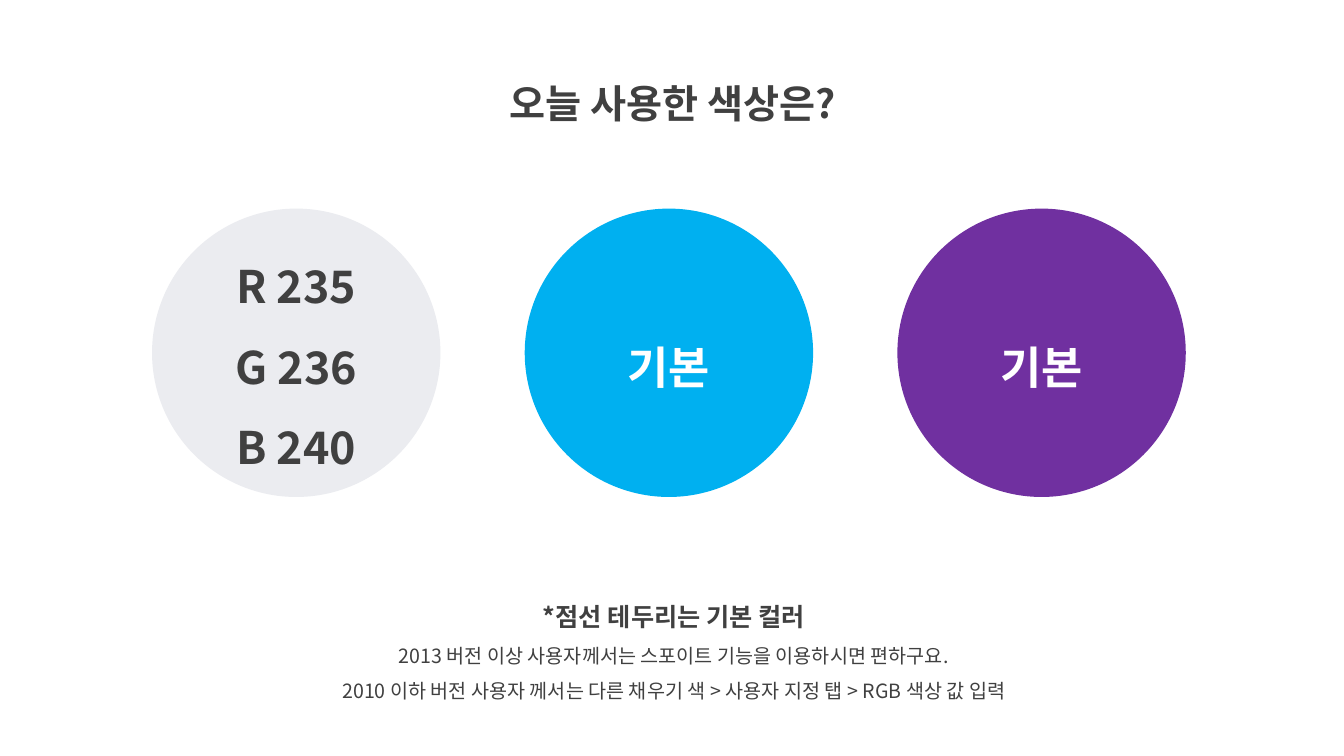
from dataclasses import dataclass

import pptx
import pptx.dml.color
import pptx.enum.shapes
import pptx.enum.text
import pptx.oxml
import pptx.oxml.ns
import pptx.util
from pptx.util import Pt


@dataclass(frozen=True)
class Theme:
    font: str = "Noto Sans CJK KR"
    dark: str = "404040"
    white: str = "FFFFFF"
    gray: str = "EBECF0"
    blue: str = "00B0F0"
    purple: str = "7030A0"
    title_size: float = 28
    swatch_size: float = 32
    heading_size: float = 18
    body_size: float = 14
    line_spacing: float = 1.5


@dataclass(frozen=True)
class Line:
    text: str
    size: float
    color: str
    bold: bool = True


@dataclass(frozen=True)
class TextBlock:
    left: float
    top: float
    width: float
    height: float
    lines: list[Line]


@dataclass(frozen=True)
class Swatch:
    fill: str
    color: str
    labels: list[str]


THEME = Theme()
SWATCH_LEFT, SWATCH_TOP = 108.6, 149
SWATCH_DIAMETER, SWATCH_PITCH = 206, 266.2

TEXT_BLOCKS = [
    TextBlock(314, 36, 333.4, 52, [
        Line("오늘 사용한 색상은?", THEME.title_size, THEME.dark),
    ]),
    TextBlock(193.6, 415.5, 575.4, 91, [
        Line("*점선 테두리는 기본 컬러", THEME.heading_size, THEME.dark),
        Line("2013 버전 이상 사용자께서는 스포이트 기능을 이용하시면 편하구요.",
             THEME.body_size, THEME.dark, False),
        Line("2010 이하 버전 사용자 께서는 다른 채우기 색 > 사용자 지정 탭 > RGB 색상 값 입력",
             THEME.body_size, THEME.dark, False),
    ]),
]

SWATCHES = [
    Swatch(THEME.gray, THEME.dark, ["R 235", "G 236", "B 240"]),
    Swatch(THEME.blue, THEME.white, ["기본"]),
    Swatch(THEME.purple, THEME.white, ["기본"]),
]


def rgb(value: str) -> pptx.dml.color.RGBColor:
    return pptx.dml.color.RGBColor.from_string(value)


def write_lines(frame: pptx.text.text.TextFrame, lines: list[Line]) -> None:
    frame.word_wrap = True
    frame.text = "\n".join(line.text for line in lines)
    for paragraph, line in zip(frame.paragraphs, lines):
        paragraph.alignment = pptx.enum.text.PP_ALIGN.CENTER
        paragraph.line_spacing = THEME.line_spacing
        for run in paragraph.runs:
            run.font.name = THEME.font
            run.font.size = Pt(line.size)
            run.font.bold = line.bold
            run.font.color.rgb = rgb(line.color)
            set_hangul_font(run)


def set_hangul_font(run: pptx.text.text._Run) -> None:
    """Give East Asian characters the theme font, which font.name leaves out."""
    latin = run.font._element.find(pptx.oxml.ns.qn("a:latin"))
    hangul = pptx.oxml.parse_xml(
        f'<a:ea {pptx.oxml.ns.nsdecls("a")} typeface="{THEME.font}"/>')
    latin.addnext(hangul)


def add_text_block(slide: pptx.slide.Slide, block: TextBlock) -> None:
    box = slide.shapes.add_textbox(
        Pt(block.left), Pt(block.top), Pt(block.width), Pt(block.height))
    write_lines(box.text_frame, block.lines)
    box.text_frame.auto_size = pptx.enum.text.MSO_AUTO_SIZE.SHAPE_TO_FIT_TEXT


def add_swatch(slide: pptx.slide.Slide, swatch: Swatch, left: float) -> None:
    circle = slide.shapes.add_shape(
        pptx.enum.shapes.MSO_SHAPE.OVAL,
        Pt(left), Pt(SWATCH_TOP), Pt(SWATCH_DIAMETER), Pt(SWATCH_DIAMETER))
    circle.shadow.inherit = False
    circle.fill.solid()
    circle.fill.fore_color.rgb = rgb(swatch.fill)
    circle.line.fill.background()
    circle.text_frame.vertical_anchor = pptx.enum.text.MSO_ANCHOR.MIDDLE
    write_lines(circle.text_frame, [
        Line(label, THEME.swatch_size, swatch.color) for label in swatch.labels])


def main() -> None:
    deck = pptx.Presentation()
    deck.slide_width, deck.slide_height = Pt(960), Pt(540)
    slide = deck.slides.add_slide(deck.slide_layouts[6])
    for block in TEXT_BLOCKS:
        add_text_block(slide, block)
    for index, swatch in enumerate(SWATCHES):
        add_swatch(slide, swatch, SWATCH_LEFT + index * SWATCH_PITCH)
    deck.save("out.pptx")


if __name__ == "__main__":
    main()
